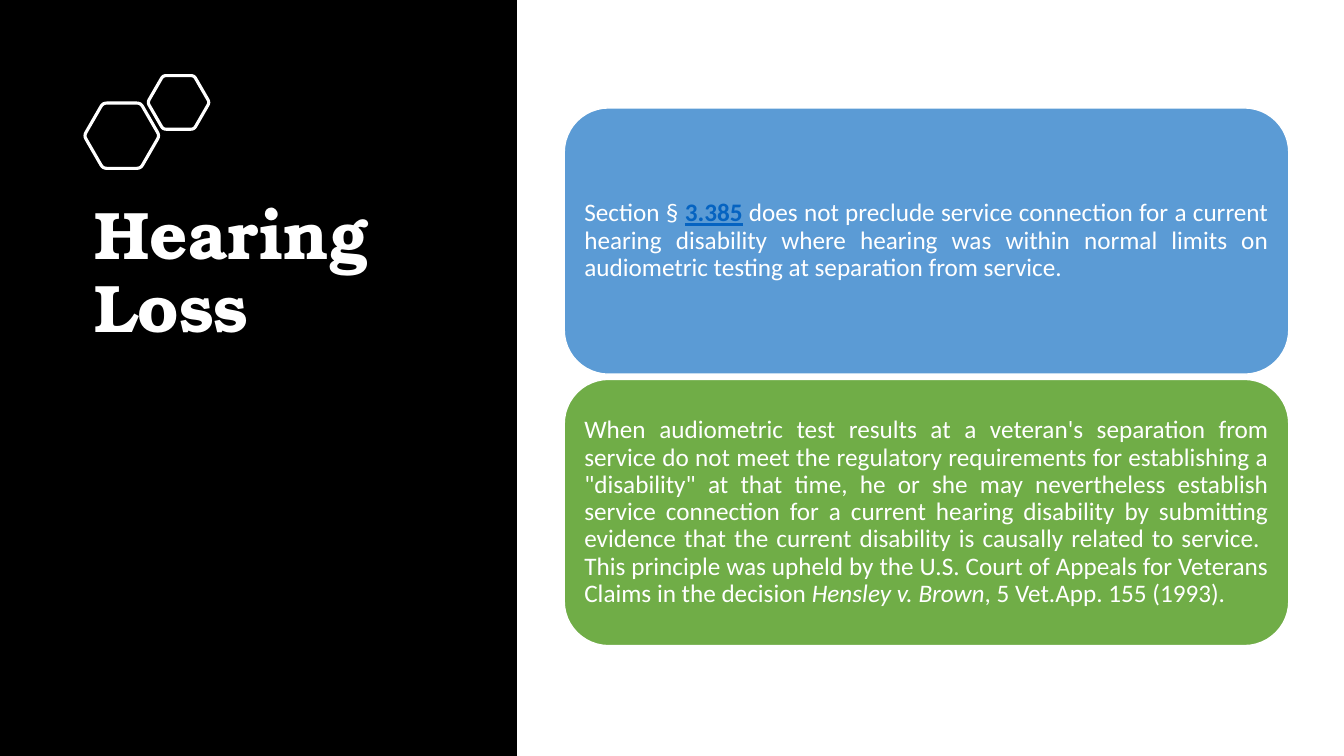
from math import cos, pi, sin

from pptx import Presentation
from pptx.dml.color import RGBColor
from pptx.enum.shapes import MSO_SHAPE
from pptx.enum.text import MSO_ANCHOR, PP_ALIGN
from pptx.util import Cm, Pt

WHITE, BLACK, LINK_BLUE = "FFFFFF", "000000", "0563C1"
HEXAGONS = [(3.07, 3.42, 0.95), (4.5, 2.58, 0.78)]
CARDS = [
    ("5B9BD5", [
        ("Section § ", ""),
        ("3.385", "link"),
        (" does not preclude service connection for a current hearing disability "
         "where hearing was within normal limits on audiometric testing at "
         "separation from service.", ""),
    ]),
    ("70AD47", [
        ("When audiometric test results at a veteran's separation from service do "
         "not meet the regulatory requirements for establishing a \"disability\" at "
         "that time, he or she may nevertheless establish service connection for a "
         "current hearing disability by submitting evidence that the current "
         "disability is causally related to service.  This principle was upheld by "
         "the U.S. Court of Appeals for Veterans Claims in the decision ", ""),
        ("Hensley v. Brown", "italic"),
        (", 5 Vet.App. 155 (1993).", ""),
    ]),
]


def rgb(value):
    """Turn a hex string into a colour."""
    return RGBColor.from_string(value)


def add_box(s, kind, left, top, width, height, fill):
    """Add a filled preset shape without line or shadow, sized in centimetres."""
    sp = s.shapes.add_shape(kind, Cm(left), Cm(top), Cm(width), Cm(height))
    sp.shadow.inherit = False
    sp.fill.solid()
    sp.fill.fore_color.rgb = rgb(fill)
    sp.line.fill.background()
    return sp


def rounded_hexagon(x, y, radius, cut=0.1, steps=4):
    """Return the points of a regular hexagon whose corners are rounded."""
    corners = [(x + radius * cos(i * pi / 3), y + radius * sin(i * pi / 3))
               for i in range(6)]
    points = []
    for i, corner in enumerate(corners):
        before, after = corners[i - 1], corners[(i + 1) % 6]
        for step in range(steps + 1):
            t = step / steps
            points.append(tuple(
                c + cut * ((1 - t) ** 2 * (b - c) + t ** 2 * (a - c))
                for b, c, a in zip(before, corner, after)))
    return points


def add_hexagon(s, x, y, radius):
    """Add an outlined hexagon around a centre given in centimetres."""
    points = [(Cm(px), Cm(py)) for px, py in rounded_hexagon(x, y, radius)]
    builder = s.shapes.build_freeform(*points[0])
    builder.add_line_segments(points[1:], close=True)
    sp = builder.convert_to_shape()
    sp.shadow.inherit = False
    sp.fill.background()
    sp.line.color.rgb = rgb(WHITE)
    sp.line.width = Pt(2.25)


def add_title_panel(s, left, top, width, height):
    """Add the dark panel with its hexagons and the title."""
    add_box(s, MSO_SHAPE.RECTANGLE, left, top, width, height, BLACK)
    for x, y, radius in HEXAGONS:
        add_hexagon(s, left + x, top + y, radius)
    tf = s.shapes.add_textbox(Cm(left + 2.13), Cm(top + 4.95),
                              Cm(9.96), Cm(8.89)).text_frame
    tf.word_wrap = True
    p = tf.paragraphs[0]
    p.text = "Hearing Loss"
    p.line_spacing = 0.9
    p.font.name, p.font.size, p.font.bold = "TeX Gyre Bonum", Pt(48), True
    p.font.color.rgb = rgb(WHITE)


def add_card(s, left, top, width, height, fill, runs):
    """Add one rounded card with justified text."""
    sp = add_box(s, MSO_SHAPE.ROUNDED_RECTANGLE, left, top, width, height, fill)
    sp.line.color.rgb = rgb(WHITE)
    sp.line.width = Pt(1)
    tf = sp.text_frame
    tf.word_wrap = True
    tf.vertical_anchor = MSO_ANCHOR.MIDDLE
    tf.margin_left = tf.margin_right = tf.margin_top = tf.margin_bottom = Cm(0.18)
    p = tf.paragraphs[0]
    p.alignment = PP_ALIGN.JUSTIFY
    p.line_spacing = 0.9
    p.font.name, p.font.size = "Calibri", Pt(18)
    for text, style in runs:
        r = p.add_run()
        r.text = text
        r.font.color.rgb = rgb(LINK_BLUE if style == "link" else WHITE)
        if style == "link":
            r.font.bold = r.font.underline = True
        elif style == "italic":
            r.font.italic = True


def add_cards(s, left, top, width, height, gap=0.13):
    """Stack the cards in equal heights inside the given box."""
    card_height = (height - gap * (len(CARDS) - 1)) / len(CARDS)
    for i, (fill, runs) in enumerate(CARDS):
        add_card(s, left, top + i * (card_height + gap), width, card_height, fill, runs)


def main():
    """Build the slide and save it."""
    prs = Presentation()
    prs.slide_width, prs.slide_height = Cm(33.87), Cm(19.05)
    s = prs.slides.add_slide(prs.slide_layouts[6])
    add_title_panel(s, 0, 0, 13.03, 19.05)
    add_cards(s, 14.22, 2.72, 18.26, 13.55)
    prs.save("out.pptx")


if __name__ == "__main__":
    main()
